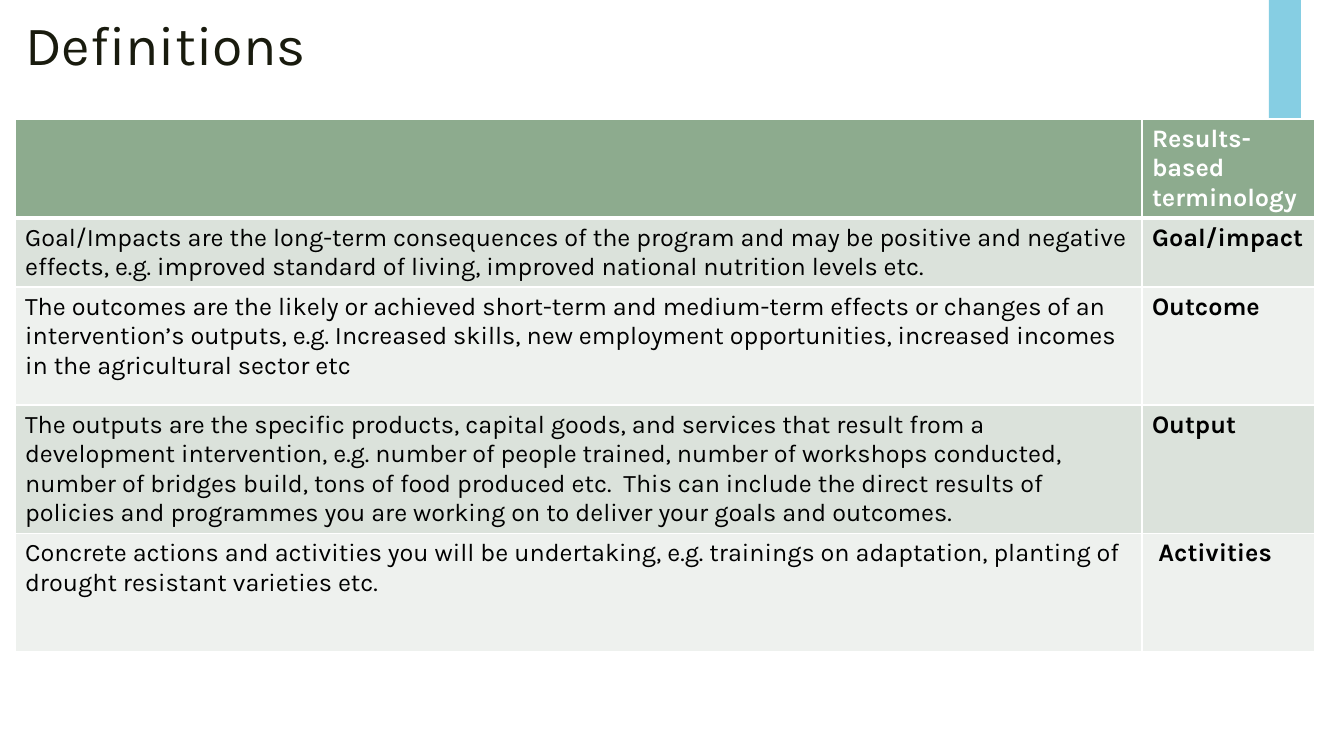
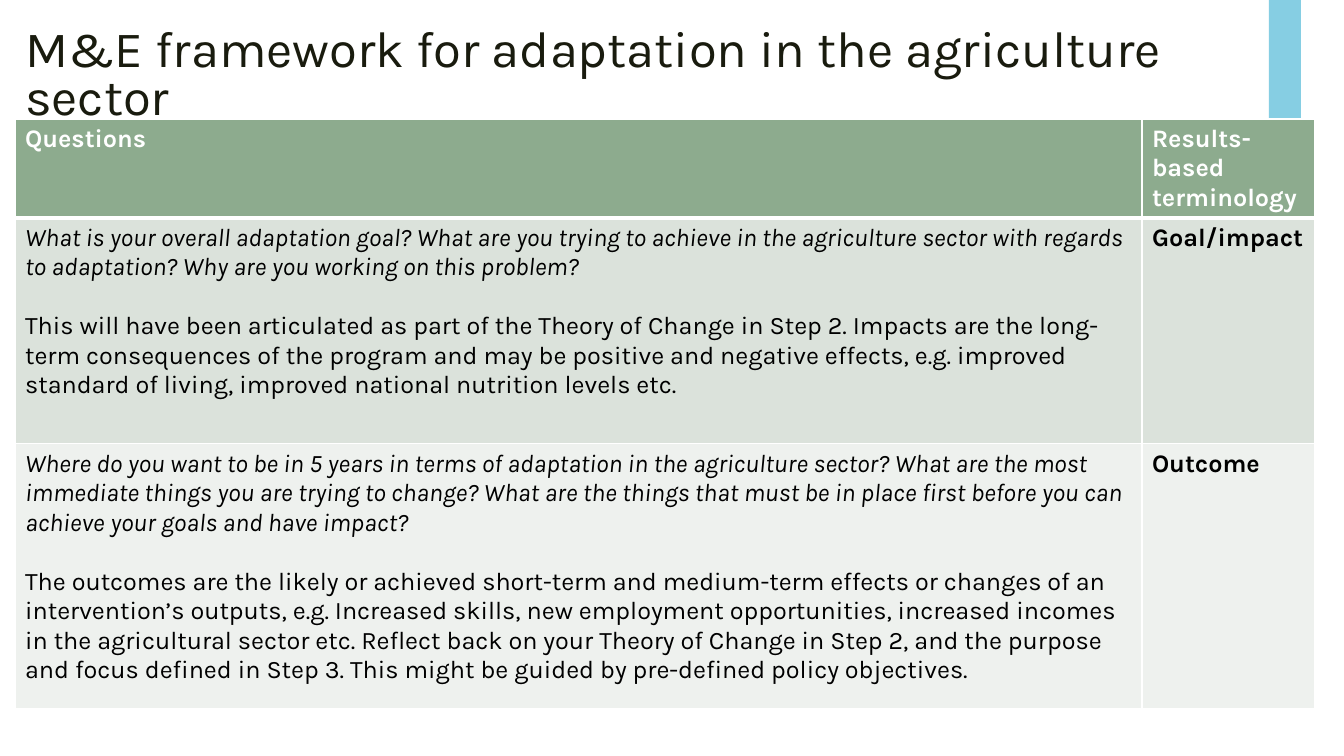
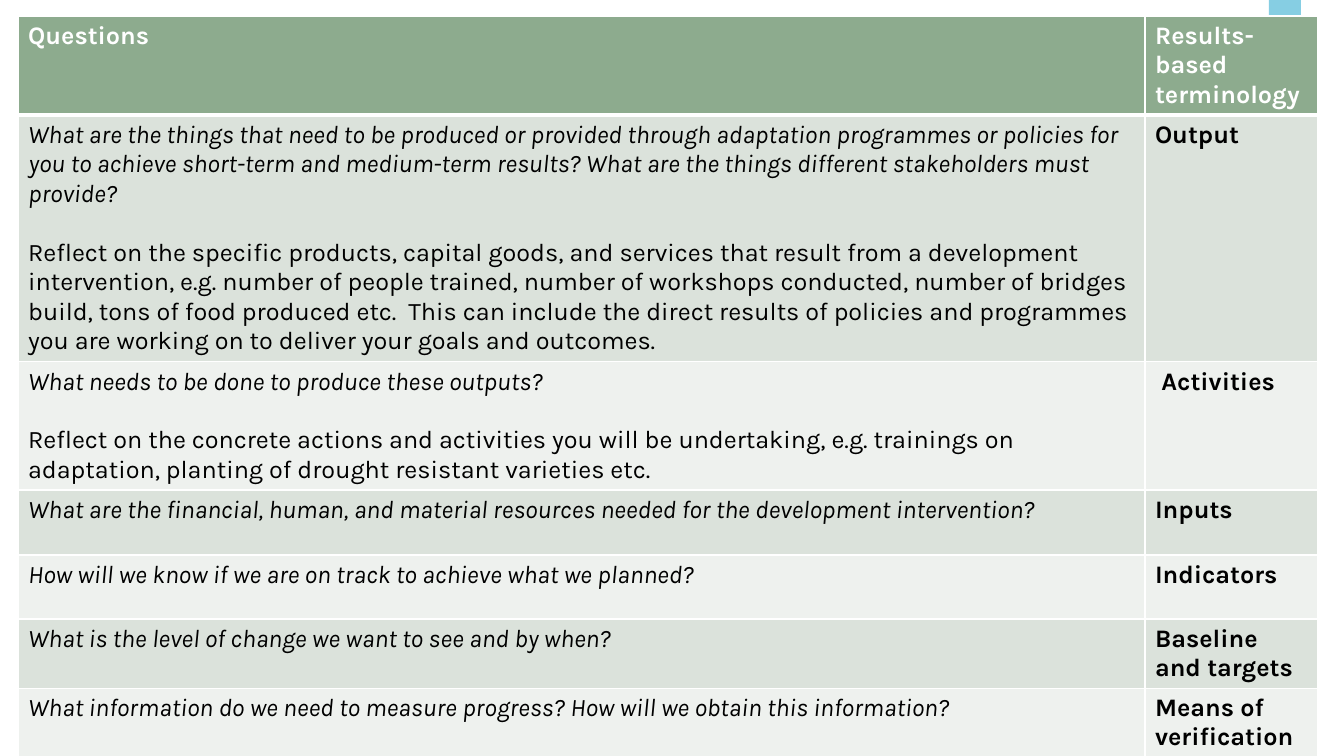
from lxml import etree
from pptx import Presentation
from pptx.dml.color import RGBColor
from pptx.enum.shapes import MSO_SHAPE
from pptx.enum.text import MSO_ANCHOR, MSO_AUTO_SIZE, PP_ALIGN
from pptx.oxml.ns import qn
from pptx.util import Emu, Pt

RECTANGLE = MSO_SHAPE.RECTANGLE
TOP = MSO_ANCHOR.TOP
LEFT = PP_ALIGN.LEFT
NO_AUTOFIT = MSO_AUTO_SIZE.NONE

WHITE = RGBColor(0xFF, 0xFF, 0xFF)
BLACK = RGBColor(0x00, 0x00, 0x00)
TITLE_INK = RGBColor(0x19, 0x1B, 0x0E)
SKY = RGBColor(0x86, 0xCE, 0xE3)
SAGE = RGBColor(0x8D, 0xAB, 0x8E)
BANDS = (RGBColor(0xDB, 0xE2, 0xDB), RGBColor(0xEE, 0xF1, 0xEE))

FONT = "Karla"
TABLE_SIZE = Pt(18)
PARAGRAPH_GAP = Pt(21)
SLIDE_SIZE = (1344, 756)
BAR = (1269, 0, 32, 239)
TITLE_BOX = (15, 25, 1263, 94)
TITLE_INSET = 4
COLUMNS = (1127, 173)
HEADER_HEIGHT = 98
TERM_HEADER = "Results-based terminology"
TITLE_ONLY, BLANK = 5, 6

# Each row: question (italic), explanation (upright), term, height in px.
SLIDES = [
    {
        "title": ("Definitions", 39.6, 0.69),
        "corner": (15, 119),
        "header": "",
        "rows": [
            ("", "Goal/Impacts are the long-term consequences of the program and may be "
             "positive and negative effects, e.g. improved standard of living, improved "
             "national nutrition levels etc.", "Goal/impact", 69),
            ("", "The outcomes are the likely or achieved short-term and medium-term effects "
             "or changes of an intervention’s outputs, e.g. Increased skills, new employment "
             "opportunities, increased incomes in the agricultural sector etc",
             "Outcome", 118),
            ("", "The outputs are the specific products, capital goods, and services that "
             "result from a development intervention, e.g. number of people trained, number "
             "of workshops conducted, number of bridges build, tons of food produced etc.  "
             "This can include the direct results of policies and programmes you are working "
             "on to deliver your goals and outcomes.", "Output", 128),
            ("", "Concrete actions and activities you will be undertaking, e.g. trainings on "
             "adaptation, planting of drought resistant varieties etc.", " Activities", 118),
        ],
    },
    {
        "title": ("M&E framework for adaptation in the agriculture sector", 36.3, 0.79),
        "corner": (15, 119),
        "header": "Questions",
        "rows": [
            ("What is your overall adaptation goal? What are you trying to achieve in the "
             "agriculture sector with regards to adaptation? Why are you working on this "
             "problem?",
             "This will have been articulated as part of the Theory of Change in Step 2. "
             "Impacts are the long-term consequences of the program and may be positive and "
             "negative effects, e.g. improved standard of living, improved national nutrition "
             "levels etc.", "Goal/impact", 226),
            ("Where do you want to be in 5 years in terms of adaptation in the agriculture "
             "sector? What are the most immediate things you are trying to change? What are "
             "the things that must be in place first before you can achieve your goals and "
             "have impact?",
             "The outcomes are the likely or achieved short-term and medium-term effects or "
             "changes of an intervention’s outputs, e.g. Increased skills, new employment "
             "opportunities, increased incomes in the agricultural sector etc. Reflect back "
             "on your Theory of Change in Step 2, and the purpose and focus defined in Step 3. "
             "This might be guided by pre-defined policy objectives.", "Outcome", 265),
        ],
    },
    {
        "title": None,
        "corner": (18, 16),
        "header": "Questions",
        "rows": [
            ("What are the things that need to be produced or provided through adaptation "
             "programmes or policies for you to achieve short-term and medium-term results? "
             "What are the things different stakeholders must provide?",
             "Reflect on the specific products, capital goods, and services that result from a "
             "development intervention, e.g. number of people trained, number of workshops "
             "conducted, number of bridges build, tons of food produced etc.  This can include "
             "the direct results of policies and programmes you are working on to deliver your "
             "goals and outcomes.", "Output", 247),
            ("What needs to be done to produce these outputs?",
             "Reflect on the concrete actions and activities you will be undertaking, e.g. "
             "trainings on adaptation, planting of drought resistant varieties etc.",
             " Activities", 128),
            ("What are the ﬁnancial, human, and material resources needed for the development "
             "intervention?", "", "Inputs", 65),
            ("How will we know if we are on track to achieve what we planned?", "",
             "Indicators", 64),
            ("What is the level of change we want to see and by when?", "",
             "Baseline and targets", 69),
            ("What information do we need to measure progress? How will we obtain this "
             "information?", "", "Means of verification", 69),
        ],
    },
]


def px(length):
    return Emu(round(length * 914400 / 100.8))


def set_font(paragraph, size, color, bold=False, italic=False):
    font = paragraph.font
    font.name, font.size, font.bold, font.italic = FONT, size, bold, italic
    font.color.rgb = color


def add_bar(page):
    bar = page.shapes.add_shape(RECTANGLE, *map(px, BAR))
    bar.shadow.inherit = False
    bar.fill.solid()
    bar.fill.fore_color.rgb = SKY
    bar.line.fill.background()


def set_title(page, text, size, spacing):
    title = page.shapes.title
    title.left, title.top, title.width, title.height = map(px, TITLE_BOX)
    frame = title.text_frame
    frame.text = text
    frame.word_wrap = True
    frame.auto_size = NO_AUTOFIT
    frame.vertical_anchor = TOP
    frame.margin_top = px(TITLE_INSET)
    paragraph = frame.paragraphs[0]
    paragraph.alignment = LEFT
    paragraph.line_spacing = spacing
    set_font(paragraph, Pt(size), TITLE_INK)


def set_borders(cell, bottom):
    properties = cell._tc.get_or_add_tcPr()
    for side, width in (("L", 1), ("R", 1), ("T", 1), ("B", bottom)):
        line = etree.SubElement(properties, qn(f"a:ln{side}"), w=str(Pt(width)))
        fill = etree.SubElement(line, qn("a:solidFill"))
        etree.SubElement(fill, qn("a:srgbClr"), val=str(WHITE))


def fill_cell(cell, texts, fill, color=BLACK, bottom=1):
    """Write (text, bold, italic) paragraphs, leaving out empty texts."""
    set_borders(cell, bottom)
    cell.fill.solid()
    cell.fill.fore_color.rgb = fill
    frame = cell.text_frame
    shown = [entry for entry in texts if entry[0]]
    for index, (text, bold, italic) in enumerate(shown):
        paragraph = frame.add_paragraph() if index else frame.paragraphs[0]
        paragraph.text = text
        if index:
            paragraph.space_before = PARAGRAPH_GAP
        set_font(paragraph, TABLE_SIZE, color, bold, italic)


def add_terms_table(page, corner, header, rows):
    heights = [HEADER_HEIGHT] + [row[-1] for row in rows]
    frame = page.shapes.add_table(len(heights), len(COLUMNS), *map(px, corner),
                                  px(sum(COLUMNS)), px(sum(heights)))
    table = frame.table
    for column, width in zip(table.columns, COLUMNS):
        column.width = px(width)
    for table_row, height in zip(table.rows, heights):
        table_row.height = px(height)
    for column, text in enumerate((header, TERM_HEADER)):
        fill_cell(table.cell(0, column), [(text, True, False)], SAGE, WHITE, bottom=3)
    for index, (question, explanation, term, _) in enumerate(rows):
        band = BANDS[index % 2]
        fill_cell(table.cell(index + 1, 0),
                  [(question, False, True), (explanation, False, False)], band)
        fill_cell(table.cell(index + 1, 1), [(term, True, False)], band)


def main():
    deck = Presentation()
    deck.slide_width, deck.slide_height = map(px, SLIDE_SIZE)
    for content in SLIDES:
        layout = TITLE_ONLY if content["title"] else BLANK
        page = deck.slides.add_slide(deck.slide_layouts[layout])
        add_bar(page)
        add_terms_table(page, content["corner"], content["header"], content["rows"])
        if content["title"]:
            set_title(page, *content["title"])
    deck.save("out.pptx")


if __name__ == "__main__":
    main()
